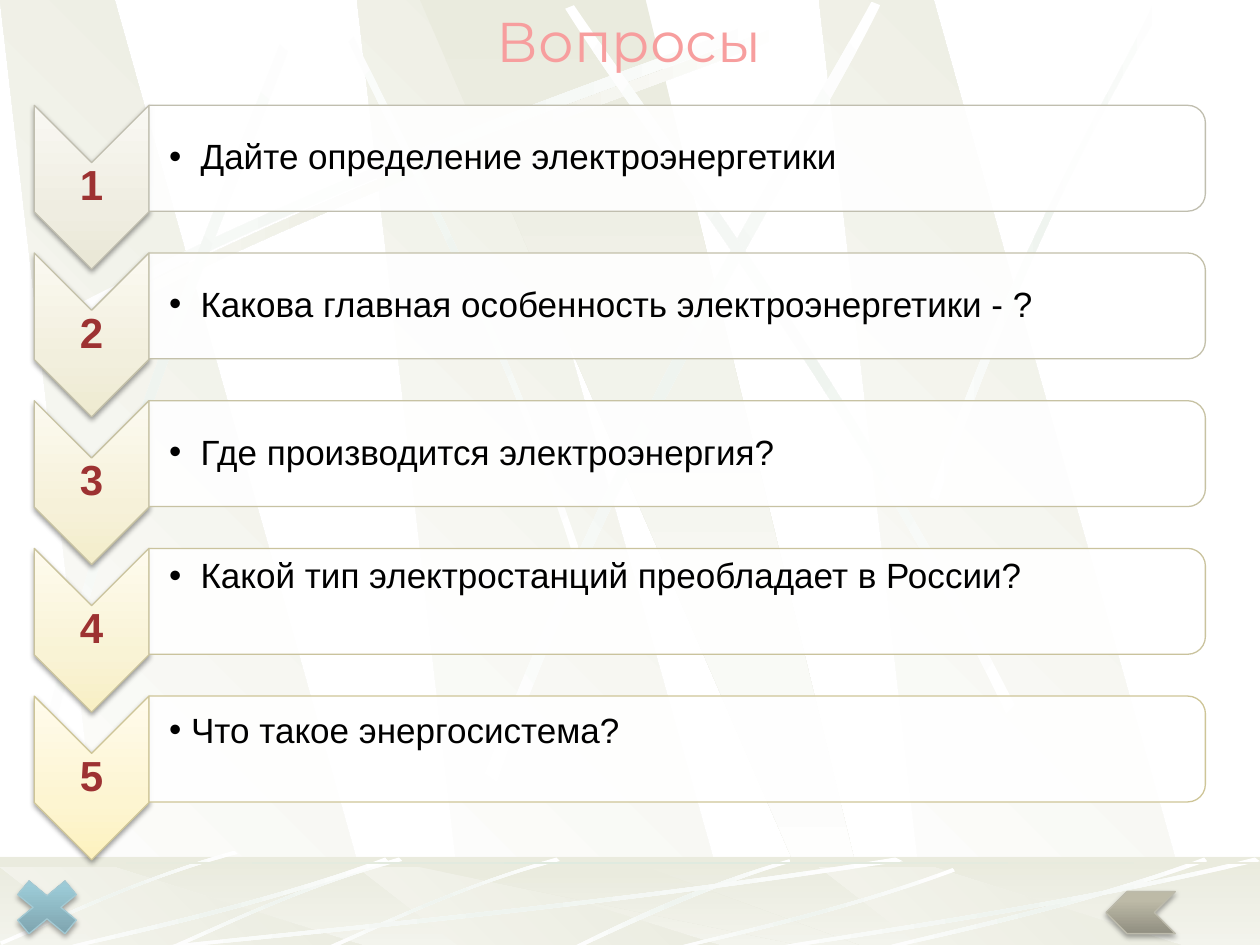
from lxml import etree
from pptx import Presentation
from pptx.dml.color import RGBColor
from pptx.enum.shapes import MSO_SHAPE
from pptx.enum.text import MSO_ANCHOR, MSO_AUTO_SIZE, PP_ALIGN
from pptx.oxml import parse_xml
from pptx.oxml.ns import nsdecls, qn
from pptx.util import Pt

RECT, CHEVRON = MSO_SHAPE.RECTANGLE, MSO_SHAPE.CHEVRON
CARD, CROSS = MSO_SHAPE.ROUND_2_SAME_RECTANGLE, MSO_SHAPE.MATH_MULTIPLY
MIDDLE, CENTER, LEFT = MSO_ANCHOR.MIDDLE, PP_ALIGN.CENTER, PP_ALIGN.LEFT
GROW = MSO_AUTO_SIZE.SHAPE_TO_FIT_TEXT

WIDTH, HEIGHT = 720, 540
FLOOR_TOP, FLOOR_HEIGHT = 489.6, 54
SAND, WHITE, MINT = "EAEBDE", "FFFFFF", "EFF4EF"
GLINT = [(0, WHITE), (50, MINT), (100, WHITE)]

# Each blade: outgoing and returning Bezier curve, then the gradient angle
LONG_BLADE = [(10, 192), (200, 90), (373, 37), (446, 7)], [(449, 12), (376, 44), (179, 103), (12, 199)]
FLOOR_BLADE = [(318, 490), (256, 508), (207, 533), (184, 542)], [(185, 544), (207, 535), (263, 506), (320, 492)]
WALL_BLADES = [
    ([(331, 314), (281, 168), (217, 55), (194, 4)], [(191, 5), (212, 57), (287, 186), (327, 316)], 45),
    (*LONG_BLADE, 0),
    ([(17, 450), (67, 240), (142, 76), (169, 1)], [(174, 3), (149, 78), (62, 265), (23, 453)], 311.7),
    ([(277, 442), (359, 230), (459, 73), (498, 1)], [(503, 3), (467, 78), (350, 256), (284, 447)], 321.6),
    ([(580, 403), (482, 211), (372, 68), (328, 3)], [(323, 5), (365, 73), (493, 234), (575, 408)], 34.7),
    ([(531, 284), (586, 125), (639, 48), (660, 0)], [(667, 0), (602, 104), (554, 232), (536, 286)], 0),
]
CENTRE_BLADE = [(451, 491), (387, 510), (343, 534), (323, 543)], [(326, 544), (353, 531), (411, 504), (452, 493)]
# Floor streaks: one blade in unit coordinates, stretched to (left, top, width, height)
STREAK = [(1, .04), (.57, .58), (.17, .86), (.01, 1)], [(0, .98), (.17, .81), (.62, .5), (.99, 0)]
STREAK_BOXES = [(72, 490, 444, 54), (30, 490, 192, 54), (379, 496, 167, 48),
                (498, 490, 192, 54), (432, 490, 288, 54)]

# Question, gradient colours of the marker, outline, hanging indent, line spacing, lift
QUESTIONS = [
    ("Дайте определение электроэнергетики", ("E9E7D5", "EFEDE1", "F9F8F3"), "C0BEAF", 18, .9, 0),
    ("Какова главная особенность электроэнергетики - ?", ("EEEAD0", "F2EFDD", "FBF9F1"), "C3C0A9", 18, .9, 0),
    ("Где производится электроэнергия?", ("F3EDCA", "F6F1D9", "FCFAF0"), "C7C2A3", 18, .9, 0),
    ("Какой тип электростанций преобладает в России?", ("F8EFC4", "F9F3D5", "FEFBEE"), "CAC39D", 18, .9, 27.5),
    ("Что такое энергосистема?", ("FDF2BF", "FDF5D1", "FFFBEC"), "CEC597", 12.6, 1, 22),
]


def color(hex_value):
    return RGBColor.from_string(hex_value)


def paint_gradient(fill, owner, stops, angle):
    fill.gradient()
    gradient = owner.find(qn("a:gradFill"))
    gradient.set("rotWithShape", "0")
    stop_list = gradient.find(qn("a:gsLst"))
    for old_stop in list(stop_list):
        stop_list.remove(old_stop)
    for position, hex_value in stops:
        stop = etree.SubElement(stop_list, qn("a:gs"), pos=str(position * 1000))
        etree.SubElement(stop, qn("a:srgbClr"), val=hex_value)
    gradient.find(qn("a:lin")).set("ang", str(round(angle * 60000)))


def paint_solid(shape, hex_value, opacity):
    shape.fill.solid()
    shape.fill.fore_color.rgb = color(hex_value)
    srgb = shape._element.spPr.find(".//" + qn("a:srgbClr"))
    etree.SubElement(srgb, qn("a:alpha"), val=str(opacity * 1000))


def outline(shape, hex_value=None):
    shape.shadow.inherit = False
    if hex_value:
        shape.line.color.rgb = color(hex_value)
        shape.line.width = Pt(.75)
    else:
        shape.line.fill.background()


def cast_shadow(shape, opacity, distance):
    shape._element.spPr.find(qn("a:effectLst")).append(parse_xml(
        f'<a:outerShdw {nsdecls("a")} blurRad="{Pt(3.1)}" dist="{Pt(distance)}" dir="5400000" '
        f'rotWithShape="0"><a:srgbClr val="000000"><a:alpha val="{opacity * 1000}"/>'
        '</a:srgbClr></a:outerShdw>'))


def add_preset(slide, preset, box, turn=0):
    shape = slide.shapes.add_shape(preset, *map(Pt, box))
    shape.rotation = turn
    return shape


def add_outline(slide, points, stops, angle):
    start, *rest = [(Pt(x), Pt(y)) for x, y in points]
    builder = slide.shapes.build_freeform(*start)
    builder.add_line_segments(rest, close=True)
    shape = builder.convert_to_shape()
    outline(shape)
    paint_gradient(shape.fill, shape._element.spPr, stops, angle)
    return shape


def add_blade(slide, curves, angle=0, stops=GLINT, shift=(0, 0), scale=(1, 1)):
    points = [(x * scale[0] + shift[0], y * scale[1] + shift[1]) for curve in curves for x, y in curve]
    blade = add_outline(slide, points, stops, angle)
    # Turn the segments of both long edges into Bezier curves
    segments = list(blade._element.iter(qn("a:lnTo")))
    for edge in (segments[:3], segments[4:7]):
        curve = etree.Element(qn("a:cubicBezTo"))
        edge[0].addprevious(curve)
        for segment in edge:
            curve.append(segment[0])
            segment.getparent().remove(segment)


def add_slabs(slide, top, height):
    bottom = top + height
    for left in (204, 0, 468):
        add_outline(slide, [(left + 62, bottom), (left + 217.5, bottom), (left + 65.5, top), (left, top)],
                    [(0, WHITE), (100, SAND)], 315)
    add_outline(slide, [(240, top), (474, bottom), (500, bottom), (369, top)],
                [(0, SAND), (100, WHITE)], 90)


def add_wall(slide):
    add_slabs(slide, 0, HEIGHT)
    add_blade(slide, LONG_BLADE, stops=[(0, WHITE), (50, SAND), (100, WHITE)], shift=(4, 6))
    for *curves, angle in WALL_BLADES:
        add_blade(slide, curves, angle)


def add_floor(slide, box):
    ground = add_preset(slide, RECT, box)
    outline(ground)
    paint_gradient(ground.fill, ground._element.spPr, [(0, SAND), (100, WHITE)], 90)
    add_slabs(slide, 495.5, 48)
    veil = add_preset(slide, RECT, box)
    outline(veil)
    paint_solid(veil, SAND, 50)
    add_blade(slide, CENTRE_BLADE)
    for shift in ((0, 0), (-90, 0), (-184, -4)):
        add_blade(slide, FLOOR_BLADE, 315, shift=shift)
    for left, top, width, height in STREAK_BOXES:
        add_blade(slide, STREAK, shift=(left, top), scale=(width, height))
    edge = add_preset(slide, RECT, (0, 492.5, WIDTH, 1.5))
    outline(edge)
    paint_gradient(edge.fill, edge._element.spPr, [(0, SAND), (50, "DFEADF"), (100, SAND)], 0)


def move_to_master(slide, master):
    """Hand the backdrop drawn so far to the master, behind its placeholders."""
    backdrop = [shape for shape in slide.shapes if not shape.is_placeholder]
    first_placeholder = master.placeholders[0]._element
    for number, shape in enumerate(backdrop, start=100):
        shape._element.nvSpPr.cNvPr.set("id", str(number))
        first_placeholder.addprevious(shape._element)


def add_label(slide, box, text, margins, alignment, spacing, font, hanging=0):
    frame = slide.shapes.add_textbox(*map(Pt, box)).text_frame
    left, top, right, bottom = map(Pt, margins)
    settings = dict(word_wrap=True, vertical_anchor=MIDDLE, margin_left=left,
                    margin_top=top, margin_right=right, margin_bottom=bottom)
    for name, value in settings.items():
        setattr(frame, name, value)
    paragraph = frame.paragraphs[0]
    paragraph.alignment, paragraph.line_spacing = alignment, spacing
    if hanging:
        properties = paragraph._p.get_or_add_pPr()
        properties.set("marL", str(Pt(hanging)))
        properties.set("indent", str(-Pt(hanging)))
        etree.SubElement(properties, qn("a:buFont"), typeface="Arial")
        etree.SubElement(properties, qn("a:buChar"), char="•")
    run = paragraph.add_run()
    run.text = text
    hex_value = font.pop("color")
    for name, value in font.items():
        setattr(run.font, name, value)
    run.font.color.rgb = color(hex_value)


def add_question(slide, box, number, question):
    text, tints, line, hanging, spacing, lift = question
    left, top, width, height = box
    # Numbered marker, a chevron turned to point down
    long_side, short_side = 93.6, 65.5
    inset = (long_side - short_side) / 2
    marker = add_preset(slide, CHEVRON, (left - inset, top + inset, long_side, short_side), 90)
    outline(marker, line)
    paint_gradient(marker.fill, marker._element.spPr, zip((0, 35, 100), tints), 270)
    cast_shadow(marker, 38, 1.6)
    add_label(slide, (left, top + 32.5, short_side, 28), str(number), [1.5] * 4, CENTER, .9,
              dict(name="Arial", size=Pt(24), bold=True, color="9D3232"))
    # Card, turned so that its rounded side is on the right
    card_left, card_width = left + short_side, width - short_side
    offset = (card_width - height) / 2
    card = add_preset(slide, CARD, (card_left + offset, top - offset, height, card_width), 90)
    outline(card, line)
    paint_solid(card, WHITE, 90)
    add_label(slide, (card_left, top + 3, card_width - 3, height - 6), text,
              (11.5, 1, 1, 1 + lift), LEFT, spacing,
              dict(name="Arial", size=Pt(20), color="000000"), hanging)


def add_questions(slide, box, pitch):
    left, top, width, height = box
    for index, question in enumerate(QUESTIONS):
        add_question(slide, (left, top + index * pitch, width, height), index + 1, question)


def add_buttons(slide):
    close = add_preset(slide, CROSS, (.9, 497, 52, 43))
    back = add_preset(slide, CHEVRON, (632, 509.5, 39.6, 24))
    back._element.spPr.find(qn("a:xfrm")).set("flipH", "1")
    for button, tints, line in ((close, ("789CA6", "9CCBD7", "9CCCD9"), "A3C9D3"),
                                (back, ("918F81", "BDBAA7", "BEBBA7"), "BCBAAB")):
        outline(button, line)
        paint_gradient(button.fill, button._element.spPr, zip((0, 80, 100), tints), 270)
        cast_shadow(button, 35, 1.8)


def place_title(slide, box, text):
    title = slide.shapes.title
    for name, value in zip(("left", "top", "width", "height"), box):
        setattr(title, name, Pt(value))
    slide.shapes._spTree.append(title._element)
    title.text_frame.vertical_anchor, title.text_frame.auto_size = MIDDLE, GROW
    paragraph = title.text_frame.paragraphs[0]
    paragraph.alignment = CENTER
    run = paragraph.add_run()
    run.text = text
    run.font.name, run.font.size = "Montserrat", Pt(32)
    paint_gradient(run.font.fill, run._r.rPr, [(0, "7F4F4F"), (78, "F79E9E"), (100, "FFF5F5")], 90)


def main():
    deck = Presentation()
    deck.slide_width, deck.slide_height = Pt(WIDTH), Pt(HEIGHT)
    slide = deck.slides.add_slide(deck.slide_layouts[5])
    add_wall(slide)
    add_floor(slide, (0, FLOOR_TOP, WIDTH, FLOOR_HEIGHT))
    move_to_master(slide, deck.slide_master)
    add_questions(slide, (19.6, 60.2, 669.2, 60.5), 84.4)
    add_buttons(slide)
    place_title(slide, (0, 0, 719, 46), "Вопросы")
    deck.save("out.pptx")


if __name__ == "__main__":
    main()
